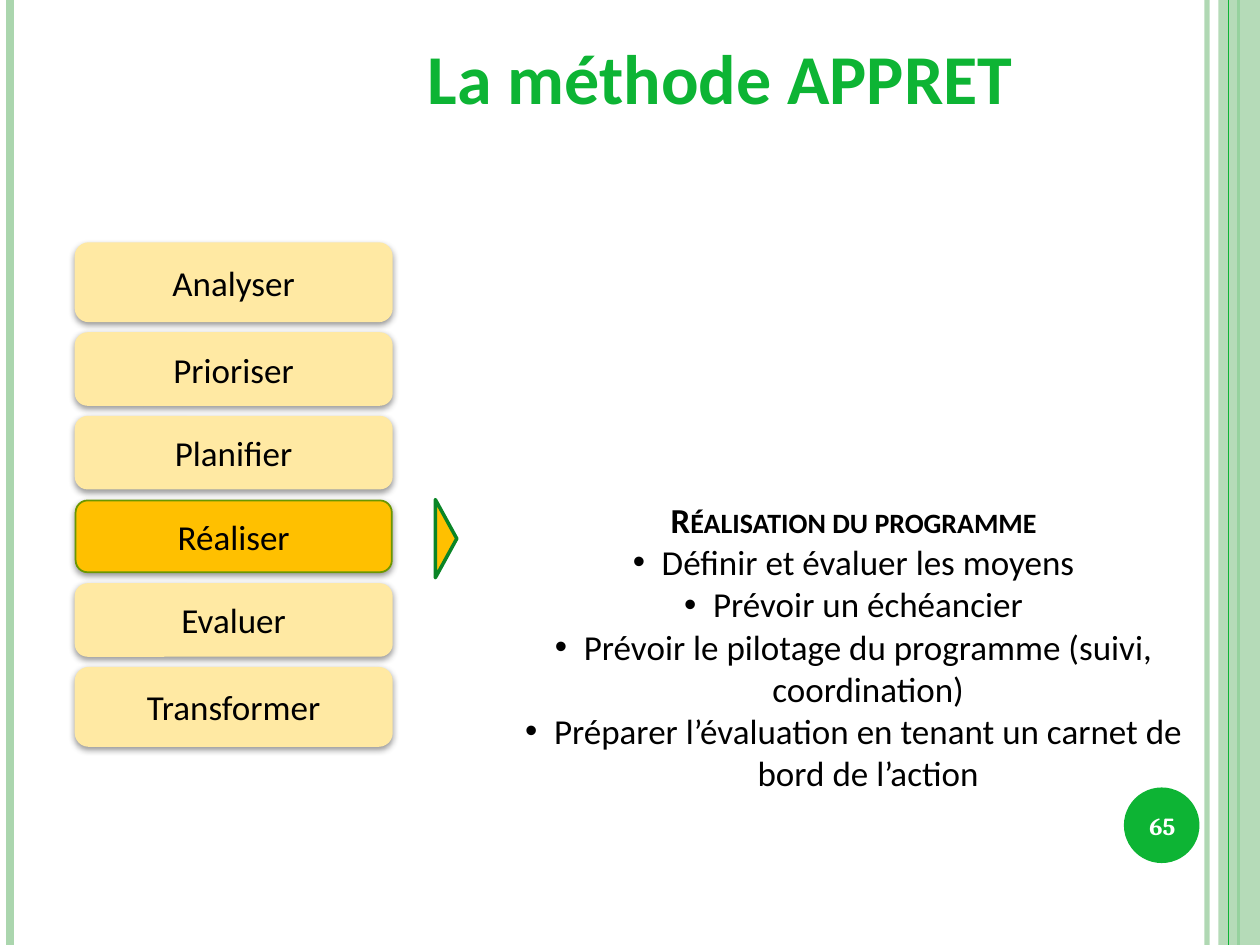
from dataclasses import dataclass

from lxml import etree
from pptx import Presentation
from pptx.dml.color import RGBColor
from pptx.enum.shapes import MSO_CONNECTOR, MSO_SHAPE
from pptx.enum.text import MSO_ANCHOR, PP_ALIGN
from pptx.oxml.ns import qn
from pptx.util import Inches, Pt

LINE = MSO_CONNECTOR.STRAIGHT
RECT, ROUNDED = MSO_SHAPE.RECTANGLE, MSO_SHAPE.ROUNDED_RECTANGLE
OVAL, TRIANGLE = MSO_SHAPE.OVAL, MSO_SHAPE.ISOSCELES_TRIANGLE
TOP, MIDDLE, BOTTOM = MSO_ANCHOR.TOP, MSO_ANCHOR.MIDDLE, MSO_ANCHOR.BOTTOM
CENTER = PP_ALIGN.CENTER
COLUMNS, ROWS = 100, 75


@dataclass(frozen=True)
class Theme:
    green: str = "0DB434"
    pale_green: str = "ABD6AE"
    arrow_edge: str = "0A8526"
    step: str = "FFE9A3"
    active: str = "FFC000"
    active_edge: str = "6B9700"
    ink: str = "000000"
    white: str = "FFFFFF"
    font: str = "Calibri"
    number_font: str = "Cambria"
    title_size: int = 40
    body_size: int = 20
    number_size: int = 14


def add_xml(parent, tag, **attributes):
    return etree.SubElement(parent, qn(tag), attributes)


def set_alpha(parent, percent):
    for color in parent.iter(qn("a:srgbClr")):
        add_xml(color, "a:alpha", val=str(percent * 1000))


class Page:
    """Draws on one slide; every length is in grid columns or rows."""

    def __init__(self, deck, theme):
        self.theme = theme
        self.slide = deck.slides.add_slide(deck.slide_layouts[6])
        self.column = deck.slide_width / COLUMNS
        self.row = deck.slide_height / ROWS

    def place(self, left, top, width, height):
        return (round(left * self.column), round(top * self.row),
                round(width * self.column), round(height * self.row))

    def vertical_line(self, column, color, weight, opacity=100):
        x, top, _, bottom = self.place(column, 0, 0, ROWS)
        line = self.slide.shapes.add_connector(LINE, x, top, x, bottom)
        line.line.color.rgb = RGBColor.from_string(color)
        line.line.width = Pt(weight)
        properties = line._element.spPr
        if opacity < 100:
            set_alpha(properties, opacity)
        add_xml(properties, "a:effectLst")

    def shape(self, kind, area, fill, edge=None, weight=1, opacity=100):
        shape = self.slide.shapes.add_shape(kind, *self.place(*area))
        shape.shadow.inherit = False
        shape.fill.solid()
        shape.fill.fore_color.rgb = RGBColor.from_string(fill)
        if opacity < 100:
            set_alpha(shape._element.spPr, opacity)
        if edge:
            shape.line.color.rgb = RGBColor.from_string(edge)
            shape.line.width = Pt(weight)
        else:
            shape.line.fill.background()
        return shape

    def soft_shadow(self, shape):
        effects = shape._element.spPr.find(qn("a:effectLst"))
        shadow = add_xml(effects, "a:outerShdw", blurRad=str(Pt(4)), dist=str(Pt(1.6)),
                         dir="5400000", rotWithShape="0")
        add_xml(shadow, "a:srgbClr", val=self.theme.ink)
        set_alpha(shadow, 42)

    def style(self, para, size, color, font=None, bold=False):
        para.alignment = CENTER
        for span in para.runs:
            span.font.name = font or self.theme.font
            span.font.size = Pt(size)
            span.font.bold = bold
            span.font.color.rgb = RGBColor.from_string(color)

    def text(self, area, wording, size, color, font=None, anchor=MIDDLE):
        box = self.slide.shapes.add_textbox(*self.place(*area))
        frame = box.text_frame
        frame.word_wrap = True
        frame.vertical_anchor = anchor
        frame.text = wording
        self.style(frame.paragraphs[0], size, color, font, bold=True)
        return frame

    def step(self, area, wording, active):
        theme = self.theme
        fill = theme.active if active else theme.step
        edge = theme.active_edge if active else theme.step
        box = self.shape(ROUNDED, area, fill, edge)
        self.soft_shadow(box)
        box.text_frame.vertical_anchor = MIDDLE
        box.text_frame.text = wording
        self.style(box.text_frame.paragraphs[0], theme.body_size, theme.ink)

    def heading_with_bullets(self, area, heading, items):
        theme = self.theme
        frame = self.text(area, heading, theme.body_size, theme.ink, anchor=TOP)
        frame.margin_top = frame.margin_bottom = 0
        frame.paragraphs[0].runs[0].font._element.set("cap", "small")
        for item in items:
            para = frame.add_paragraph()
            para.text = item
            indent = Inches(0.23)
            properties = para._p.get_or_add_pPr()
            properties.set("marL", str(indent))
            properties.set("indent", str(-indent))
            add_xml(properties, "a:buFont", typeface="Arial")
            add_xml(properties, "a:buChar", char="•")
            self.style(para, theme.body_size, theme.ink)


STEPS = ["Analyser", "Prioriser", "Planifier", "Réaliser", "Evaluer", "Transformer"]
ACTIVE_STEP = "Réaliser"
TASKS = [
    "Définir et évaluer les moyens",
    "Prévoir un échéancier",
    "Prévoir le pilotage du programme (suivi, coordination)",
    "Préparer l’évaluation en tenant un carnet de bord de l’action",
]


def draw_frame(page):
    theme = page.theme
    page.vertical_line(95.8, theme.pale_green, 3, opacity=93)
    page.vertical_line(0.8, theme.pale_green, 4.5)
    page.vertical_line(98.3, theme.green, 1.5)
    page.shape(RECT, (96.7, 0, 3.3, ROWS), theme.pale_green, opacity=87)
    page.vertical_line(97.5, theme.green, 0.75)
    page.shape(OVAL, (89.2, 62.5, 6, 6), theme.green)


def draw_steps(page):
    """Stack the steps with equal gaps; the two end boxes are taller."""
    top, bottom = 19.3, 59.2
    heights = [6.2] + [5.7] * (len(STEPS) - 2) + [6.2]
    gap = (bottom - top - sum(heights)) / (len(STEPS) - 1)
    for wording, height in zip(STEPS, heights):
        page.step((6, top, 25.1, height), wording, wording == ACTIVE_STEP)
        top += height + gap


def main():
    deck = Presentation()
    deck.slide_width, deck.slide_height = Inches(10), Inches(7.5)
    theme = Theme()
    page = Page(deck, theme)
    draw_frame(page)
    draw_steps(page)
    page.text((18.6, 1.9, 77.1, 8), "La méthode APPRET", theme.title_size, theme.green,
              anchor=BOTTOM)
    page.heading_with_bullets((39.8, 39.6, 55.9, 26.8), "Réalisation du programme", TASKS)
    arrow = page.shape(TRIANGLE, (32.3, 41.9, 6.2, 1.7), theme.active, theme.arrow_edge, 2)
    arrow.rotation = 90
    page.text((88.9, 62.7, 6.7, 5.7), "65", theme.number_size, theme.white, theme.number_font)
    deck.save("out.pptx")


if __name__ == "__main__":
    main()
